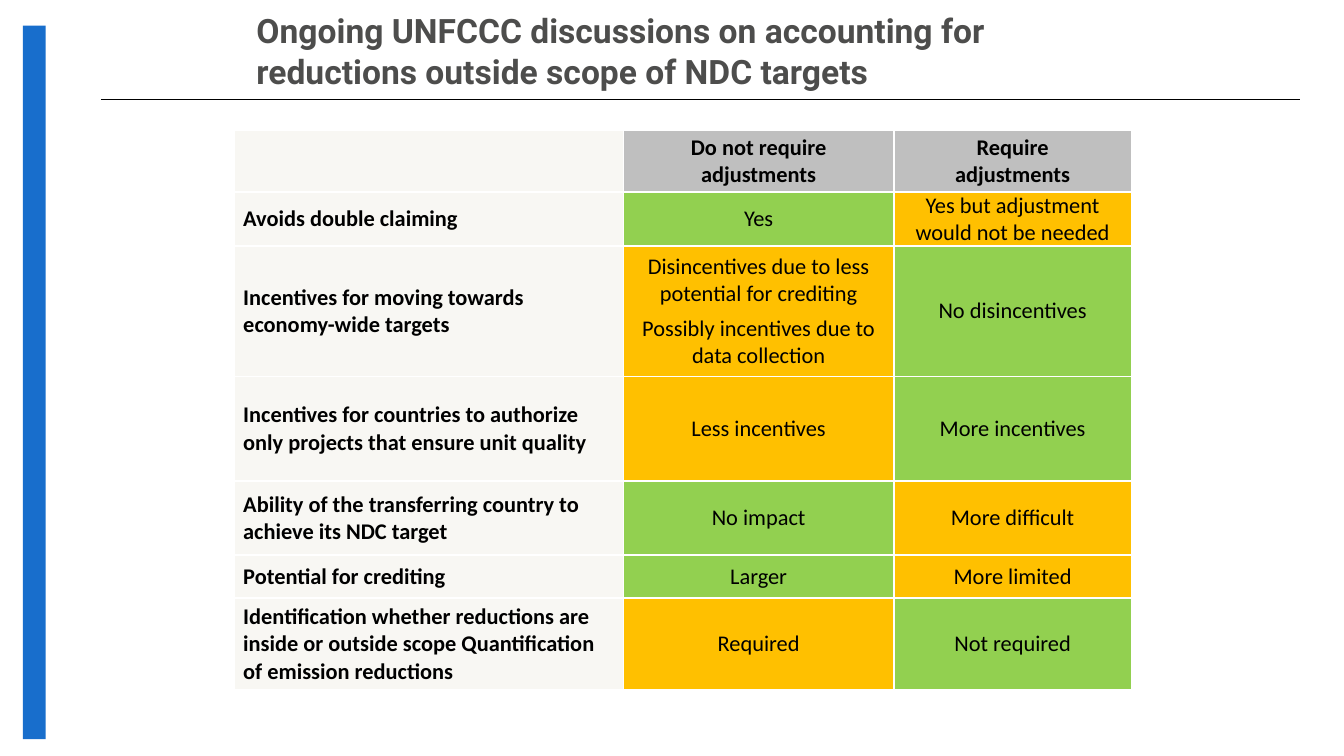
"""Build a slide comparing options for accounting outside the scope of NDC targets."""
from copy import deepcopy
from typing import NamedTuple

from lxml import etree
from pptx import Presentation
from pptx import util as u
from pptx.dml.color import RGBColor
from pptx.enum import shapes, text
from pptx.oxml import ns

BLACK = RGBColor(0x00, 0x00, 0x00)
WHITE = RGBColor(0xFF, 0xFF, 0xFF)
BLUE = RGBColor(0x18, 0x6E, 0xCC)
DARK = RGBColor(0x4D, 0x4D, 0x4C)
GREY = RGBColor(0xBF, 0xBF, 0xBF)
PALE = RGBColor(0xF8, 0xF7, 0xF3)
GREEN = RGBColor(0x92, 0xD0, 0x50)
AMBER = RGBColor(0xFF, 0xC0, 0x00)

TITLE_FONT = {"name": "Roboto", "size": u.Pt(18), "bold": True}
CELL_FONT = {"name": "Calibri", "size": u.Pt(12)}
COLUMN_WIDTHS = (2.9, 2.01, 1.77)


class Entry(NamedTuple):
    fill: RGBColor
    lines: tuple[str, ...]
    bold: bool = False
    align: text.PP_ALIGN = text.PP_ALIGN.CENTER
    margins: tuple[float, float] = (0.06, 0)


class Row(NamedTuple):
    height: float
    entries: tuple[Entry, ...]


def heading(*lines: str) -> Entry:
    return Entry(GREY, lines, bold=True)


def criterion(label: str) -> Entry:
    return Entry(PALE, (label,), True, text.PP_ALIGN.LEFT, (0.07, 0.04))


def good(*lines: str) -> Entry:
    return Entry(GREEN, lines)


def poor(*lines: str) -> Entry:
    return Entry(AMBER, lines)


ROWS = (
    Row(0.46, (Entry(PALE, ()), heading("Do not require adjustments"),
               heading("Require\vadjustments"))),
    Row(0.4, (criterion("Avoids double claiming"), good("Yes"),
              poor("Yes but adjustment would not be needed"))),
    Row(0.97, (criterion("Incentives for moving towards economy-wide targets"),
               poor("Disincentives due to less potential for crediting",
                    "Possibly incentives due to data collection"),
               good("No disincentives"))),
    Row(0.78, (criterion("Incentives for countries to authorize only projects that ensure unit quality"),
               poor("Less incentives"), good("More incentives"))),
    Row(0.55, (criterion("Ability of the transferring country to achieve its NDC target"),
               good("No impact"), poor("More difficult"))),
    Row(0.32, (criterion("Potential for crediting"), good("Larger"), poor("More limited"))),
    Row(0.68, (criterion("Identification whether reductions are inside or outside scope "
                         "Quantification of emission reductions"),
               poor("Required"), good("Not required"))),
)


def write(p, content: str, style: dict, color: RGBColor) -> None:
    p.text = content
    for r in p.runs:
        for name, value in style.items():
            setattr(r.font, name, value)
        r.font.color.rgb = color
    for br in p._p.findall(ns.qn("a:br")):
        br.append(deepcopy(p.runs[0]._r.rPr))


def set_borders(cell) -> None:
    tc_pr = cell._tc.get_or_add_tcPr()
    for side in "LRTB":
        ln = etree.SubElement(tc_pr, ns.qn(f"a:ln{side}"), w=str(u.Pt(1)))
        fill = etree.SubElement(ln, ns.qn("a:solidFill"))
        etree.SubElement(fill, ns.qn("a:srgbClr"), val=str(WHITE))


def fill_cell(cell, entry: Entry) -> None:
    set_borders(cell)
    cell.fill.solid()
    cell.fill.fore_color.rgb = entry.fill
    cell.vertical_anchor = text.MSO_ANCHOR.MIDDLE
    side, end = map(u.Inches, entry.margins)
    cell.margin_left = cell.margin_right = side
    cell.margin_top = cell.margin_bottom = end
    tf = cell.text_frame
    for i, line in enumerate(entry.lines):
        p = tf.add_paragraph() if i else tf.paragraphs[0]
        p.alignment = entry.align
        p.space_before = u.Pt(2 if i else 0)
        p.space_after = u.Pt(2)
        write(p, line, {**CELL_FONT, "bold": entry.bold}, BLACK)


def add_frame(s) -> None:
    rule = s.shapes.add_connector(shapes.MSO_CONNECTOR.STRAIGHT, u.Inches(0.75), u.Inches(0.74),
                                  u.Inches(9.67), u.Inches(0.74))
    rule.line.color.rgb = BLACK
    rule.line.width = u.Pt(0.75)
    etree.SubElement(rule._element.spPr, ns.qn("a:effectLst"))
    bar = s.shapes.add_shape(shapes.MSO_SHAPE.RECTANGLE, u.Inches(0.17), u.Inches(0.19),
                             u.Inches(0.17), u.Inches(5.31))
    bar.shadow.inherit = False
    bar.fill.solid()
    bar.fill.fore_color.rgb = BLUE
    bar.line.fill.background()


def add_title(s, content: str) -> None:
    sp = s.shapes.add_textbox(u.Inches(1.81), 0, u.Inches(6.85), u.Inches(0.75))
    tf = sp.text_frame
    tf.word_wrap = True
    tf.vertical_anchor = text.MSO_ANCHOR.MIDDLE
    write(tf.paragraphs[0], content, TITLE_FONT, DARK)


def add_comparison(s) -> None:
    table = s.shapes.add_table(len(ROWS), len(COLUMN_WIDTHS), u.Inches(1.74), u.Inches(0.97),
                               u.Inches(sum(COLUMN_WIDTHS)),
                               u.Inches(sum(row.height for row in ROWS))).table
    for column, width in zip(table.columns, COLUMN_WIDTHS):
        column.width = u.Inches(width)
    for table_row, row in zip(table.rows, ROWS):
        table_row.height = u.Inches(row.height)
        for cell, entry in zip(table_row.cells, row.entries):
            fill_cell(cell, entry)


def main() -> None:
    prs = Presentation()
    prs.slide_width = u.Inches(10)
    prs.slide_height = prs.slide_width * 9 // 16
    s = prs.slides.add_slide(prs.slide_layouts[6])
    add_frame(s)
    add_title(s, "Ongoing UNFCCC discussions on accounting for reductions outside scope of NDC targets")
    add_comparison(s)
    prs.save("out.pptx")


if __name__ == "__main__":
    main()
